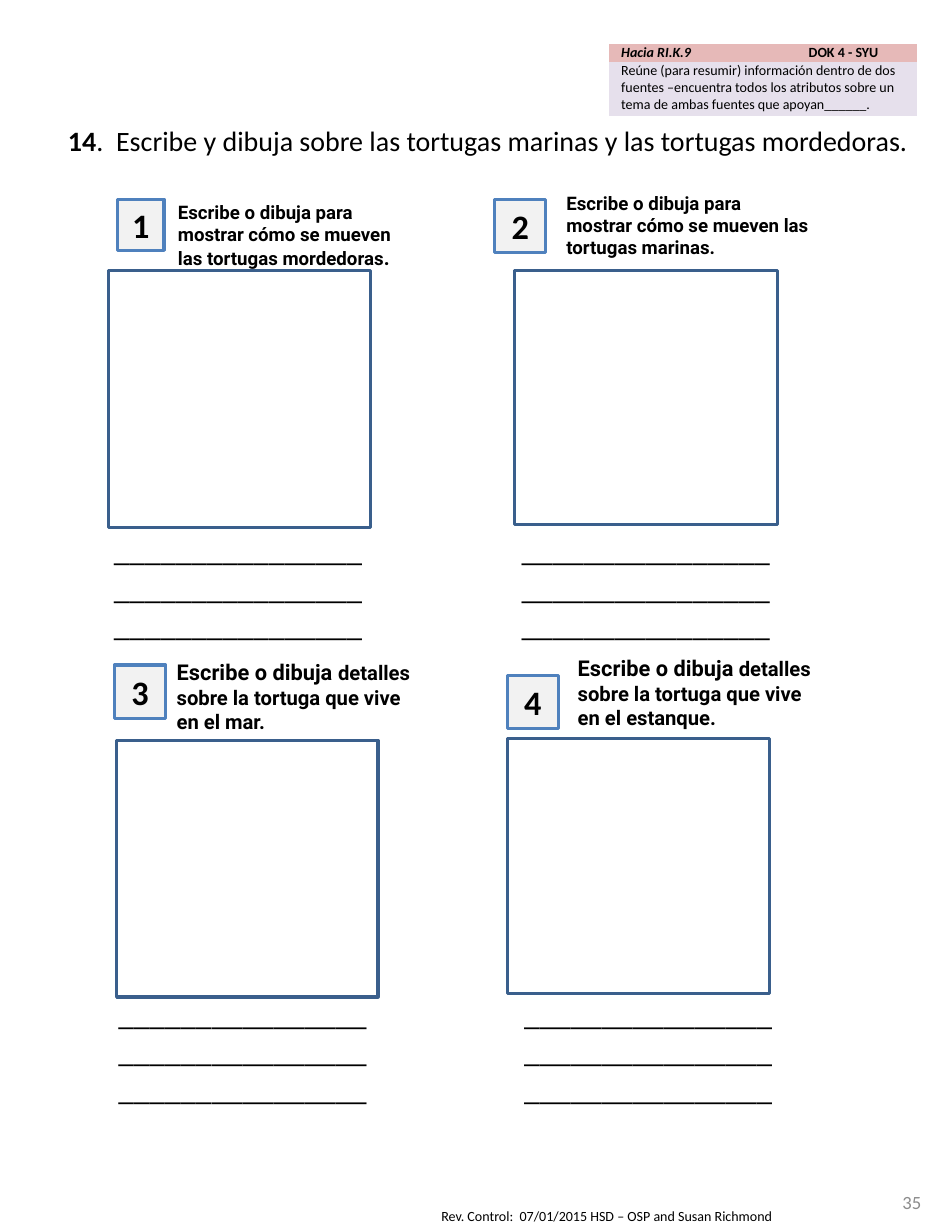
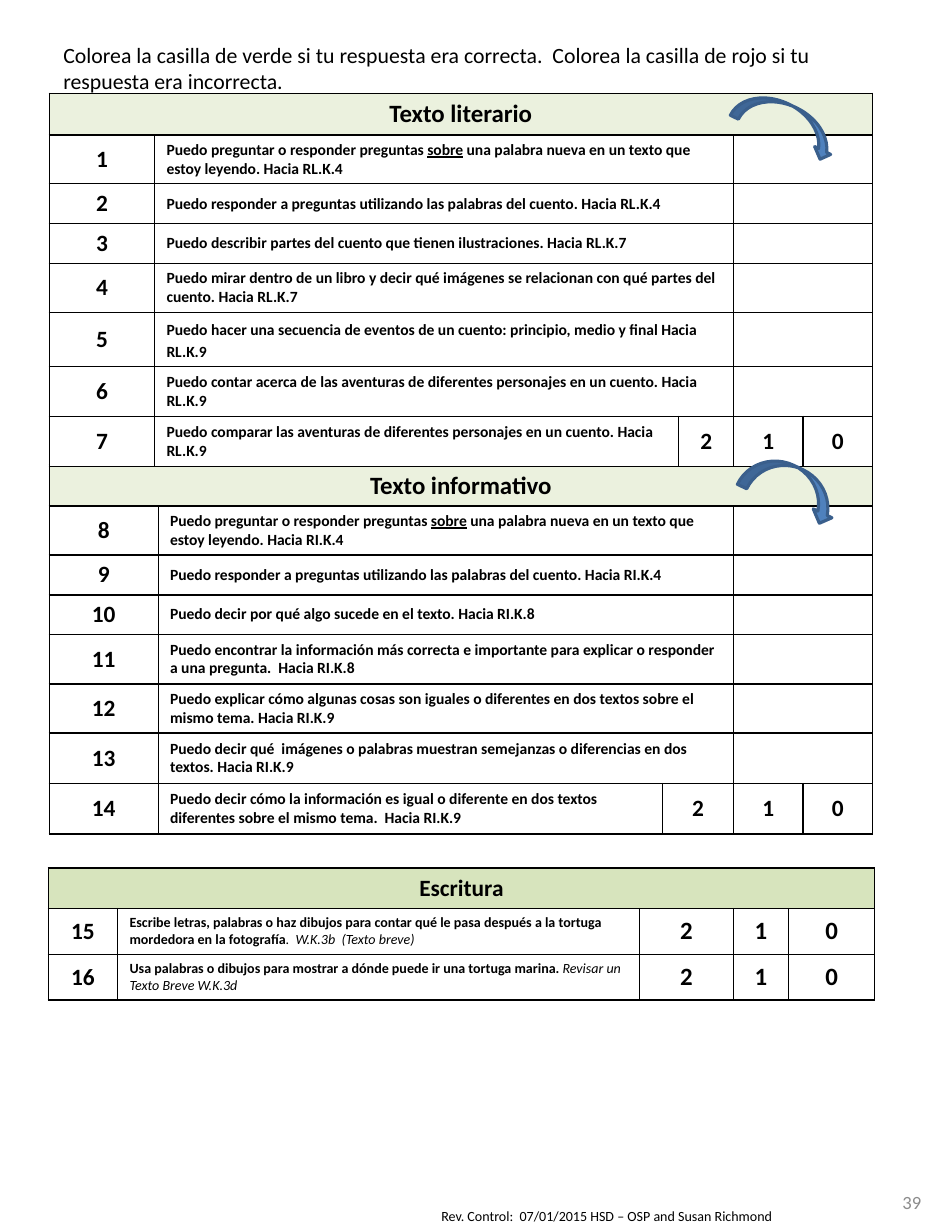
from dataclasses import dataclass

from lxml import etree
from pptx import Presentation
from pptx.dml.color import RGBColor
from pptx.enum.shapes import MSO_SHAPE
from pptx.enum.text import MSO_ANCHOR, PP_ALIGN
from pptx.oxml.ns import qn
from pptx.util import Pt

RECT = MSO_SHAPE.RECTANGLE
CURVED_ARROW = MSO_SHAPE.CURVED_DOWN_ARROW
LEFT, CENTER, RIGHT = PP_ALIGN.LEFT, PP_ALIGN.CENTER, PP_ALIGN.RIGHT
TOP, MIDDLE = MSO_ANCHOR.TOP, MSO_ANCHOR.MIDDLE
PLAIN_TABLE = "{2D5ABB26-0587-4C30-8999-92F81FD0307C}"
FOOTER = "Rev. Control:  07/01/2015 HSD – OSP and Susan Richmond"


@dataclass(frozen=True)
class Theme:
    body_font: str = "Calibri"
    prompt_font: str = "Roboto"
    black: str = "000000"
    white: str = "FFFFFF"
    gray: str = "8C8C8C"
    badge_fill: str = "F2F2F2"
    blue: str = "4F81BD"
    dark_blue: str = "3A5F8C"
    pink: str = "E6B9B8"
    lilac: str = "E6E0EC"
    pale_green: str = "EBF1DE"
    green: str = "D7E4BD"
    small: float = 9
    goal: float = 10
    page: float = 12
    intro: float = 14
    number: float = 15
    heading: float = 16
    question: float = 18
    answer: float = 20
    badge: float = 22
    inset: float = 7.7
    line: float = 2
    border: float = 1


class Deck:
    def __init__(self, theme):
        self.theme = theme
        self.prs = Presentation()
        self.prs.slide_width, self.prs.slide_height = Pt(612), Pt(792)
        self.slide = None

    def new_slide(self, page):
        """Add a blank slide with the shared footer and its page number."""
        t = self.theme
        self.slide = self.prs.slides.add_slide(self.prs.slide_layouts[6])
        self.text((276, 773, 306, 19), FOOTER, t.small, inset=t.inset)
        self.text((534, 758, 66, 30), page, t.page, color=t.gray,
                  align=RIGHT, anchor=MIDDLE, inset=t.inset)

    def set_text(self, tf, runs, size, bold=False, align=LEFT, color=None, font=None):
        """Fill the first paragraph; a run is a string or (string, font overrides)."""
        p = tf.paragraphs[0]
        p.alignment = align
        p.font.size, p.font.bold = Pt(size), bold
        p.font.name = font or self.theme.body_font
        p.font.color.rgb = RGBColor.from_string(color or self.theme.black)
        for run in [runs] if isinstance(runs, str) else runs:
            text, overrides = (run, {}) if isinstance(run, str) else run
            r = p.add_run()
            r.text = text
            for name, value in overrides.items():
                setattr(r.font, name, value)

    def text(self, box, runs, size, anchor=TOP, inset=7.2, **style):
        tf = self.slide.shapes.add_textbox(*map(Pt, box)).text_frame
        tf.word_wrap = True
        tf.vertical_anchor = anchor
        tf.margin_left = tf.margin_right = Pt(inset)
        self.set_text(tf, runs, size, **style)

    def shape(self, kind, box, fill, line, rotation=0):
        sp = self.slide.shapes.add_shape(kind, *map(Pt, box))
        sp.shadow.inherit = False
        sp.rotation = rotation
        sp.fill.solid()
        sp.fill.fore_color.rgb = RGBColor.from_string(fill)
        sp.line.color.rgb = RGBColor.from_string(line)
        sp.line.width = Pt(self.theme.line)
        return sp

    def badge(self, box, number):
        t = self.theme
        sp = self.shape(RECT, box, t.badge_fill, t.blue)
        sp.text_frame.vertical_anchor = MIDDLE
        self.set_text(sp.text_frame, number, t.badge, bold=True, align=CENTER)

    def arrow(self, box, rotation):
        self.shape(CURVED_ARROW, box, self.theme.blue, self.theme.dark_blue, rotation)

    def table(self, left, top, cols, heights):
        """Add an unstyled table whose empty cells have no margins."""
        frame = self.slide.shapes.add_table(
            len(heights), len(cols), Pt(left), Pt(top), Pt(sum(cols)), Pt(sum(heights)))
        tbl = frame.table
        tbl.first_row = tbl.horz_banding = False
        frame._element.find(".//" + qn("a:tableStyleId")).text = PLAIN_TABLE
        for col, width in zip(tbl.columns, cols):
            col.width = Pt(width)
        for row, height in zip(tbl.rows, heights):
            row.height = Pt(height)
        for cell in tbl.iter_cells():
            cell.margin_left = cell.margin_right = 0
            cell.margin_top = cell.margin_bottom = 0
        return tbl

    def fill_cell(self, cell, fill):
        cell.fill.solid()
        cell.fill.fore_color.rgb = RGBColor.from_string(fill)

    def border_cell(self, cell):
        tc_pr = cell._tc.get_or_add_tcPr()
        for side in ("a:lnL", "a:lnR", "a:lnT", "a:lnB"):
            ln = etree.SubElement(tc_pr, qn(side), w=str(Pt(self.theme.border)))
            fill = etree.SubElement(ln, qn("a:solidFill"))
            etree.SubElement(fill, qn("a:srgbClr"), val=self.theme.black)

    def cell_text(self, cell, runs, size, margin_y=3.6, anchor=MIDDLE, **style):
        cell.margin_left = cell.margin_right = Pt(self.theme.inset)
        cell.margin_top = cell.margin_bottom = Pt(margin_y)
        cell.vertical_anchor = anchor
        self.set_text(cell.text_frame, runs, size, **style)

    def standard_box(self, left, top, width, heading, description):
        """Two-row box: standard and level at a tab stop, then its description."""
        t = self.theme
        tbl = self.table(left, top, [width], [11.5, 34.7])
        head, body = tbl.cell(0, 0), tbl.cell(1, 0)
        self.cell_text(head, heading, t.small, margin_y=0, bold=True)
        p_pr = head.text_frame.paragraphs[0]._p.get_or_add_pPr()
        tabs = etree.Element(qn("a:tabLst"))
        etree.SubElement(tabs, qn("a:tab"), pos=str(Pt(120.5)), algn="l")
        p_pr.find(qn("a:defRPr")).addprevious(tabs)
        self.cell_text(body, description, t.small, margin_y=0, anchor=TOP)
        self.fill_cell(head, t.pink)
        self.fill_cell(body, t.lilac)

    def score_table(self, left, top, cols, heights, title, goals, first, scored_from,
                    title_fill, title_size, goal_size, score_size):
        """Numbered goals; from number scored_from on they carry the scores 2, 1, 0."""
        t = self.theme
        tbl = self.table(left, top, cols, heights)
        for cell in tbl.iter_cells():
            self.border_cell(cell)
            self.fill_cell(cell, t.white)
        head = tbl.cell(0, 0)
        head.merge(tbl.cell(0, 4))
        self.fill_cell(head, title_fill)
        self.cell_text(head, title, title_size, bold=True, align=CENTER)
        for row, goal in enumerate(goals, 1):
            number = first + row - 1
            self.cell_text(tbl.cell(row, 0), str(number), t.number, bold=True, align=CENTER)
            self.cell_text(tbl.cell(row, 1), goal, goal_size, bold=True)
            if number < scored_from:
                for col in (1, 3):
                    tbl.cell(row, col).merge(tbl.cell(row, col + 1))
                continue
            for col, score in enumerate("210", 2):
                self.cell_text(tbl.cell(row, col), score, score_size, bold=True, align=CENTER)
        return tbl


def drawing_slide(deck):
    t = deck.theme
    deck.new_slide("35")
    deck.standard_box(
        391.7, 28.2, 198, [("Hacia RI.K.9", {"italic": True}), "\tDOK 4 - SYU"],
        "Reúne (para resumir) información dentro de dos fuentes –encuentra todos los "
        "atributos sobre un tema de ambas fuentes que apoyan______.")
    deck.text((36, 75.6, 564, 30),
              [("14", {"bold": True}),
               ".  Escribe y dibuja sobre las tortugas marinas y las tortugas mordedoras."],
              t.question, inset=t.inset)

    larger = {"size": Pt(14)}
    # drawing frame, badge, prompt box, answer lines (left, top), prompt size, prompt
    panels = [
        ((70, 174, 168, 165), (75.5, 128, 30, 33), (107.3, 125.3, 168, 52), (66.2, 337.7), 12,
         ["Escribe o dibuja para mostrar cómo se mueven las tortugas mordedoras",
          (".", {"size": Pt(13)})]),
        ((331, 174, 169, 163.5), (318, 128, 33, 34.5), (357, 119.5, 171.4, 51), (328.3, 337.7), 12,
         "Escribe o dibuja para mostrar cómo se mueven las tortugas marinas."),
        ((75, 476, 168, 165), (73.5, 427.5, 33, 34.5), (106.5, 420, 168, 56), (69.1, 635.8), 13,
         [("Escribe o dibuja ", larger), "detalles sobre la tortuga que vive en el mar."]),
        ((326, 475, 169, 163.5), (326, 434, 33, 34.5), (364.3, 417.6, 168, 56), (329.8, 635.8), 13,
         [("Escribe o dibuja", larger), " detalles sobre la tortuga que vive en el estanque."]),
    ]
    for number, (frame, badge, prompt_box, lines, size, prompt) in enumerate(panels, 1):
        deck.shape(RECT, frame, t.white, t.dark_blue)
        deck.badge(badge, str(number))
        deck.text(prompt_box, prompt, size, bold=True, font=t.prompt_font)
        deck.text((*lines, 180, 80), "_" * 48, t.answer)


def checklist_slide(deck):
    t = deck.theme
    deck.new_slide("39")
    reading = dict(title_fill=t.pale_green, title_size=t.heading,
                   goal_size=t.goal, score_size=t.number)
    about = ("sobre", {"underline": True})
    new_word = ["Puedo preguntar o responder preguntas ", about]

    deck.score_table(
        31.7, 298.8, [70, 324, 46, 44.6, 44.6],
        [26.5, 31.5, 25.7, 25.4, 31.8, 31.5, 32.6, 32.4], "Texto informativo",
        [new_word + [" una palabra nueva en un texto que estoy leyendo. Hacia RI.K.4"],
         "Puedo responder a preguntas utilizando las palabras del cuento. Hacia RI.K.4",
         "Puedo decir por qué algo sucede en el texto. Hacia RI.K.8",
         "Puedo encontrar la información más correcta e importante para explicar o "
         "responder a una pregunta.  Hacia RI.K.8",
         "Puedo explicar cómo algunas cosas son iguales o diferentes en dos textos "
         "sobre el mismo tema. Hacia RI.K.9",
         "Puedo decir qué  imágenes o palabras muestran semejanzas o diferencias en dos "
         "textos. Hacia RI.K.9",
         "Puedo decir cómo la información es igual o diferente en dos textos diferentes "
         "sobre el mismo tema.  Hacia RI.K.9"],
        first=8, scored_from=14, **reading)

    literary = deck.score_table(
        31.7, 60, [67.7, 337, 35.3, 44.6, 44.6],
        [26.7, 31.5, 25.7, 25.4, 31.5, 34.9, 32, 32.4], "Texto literario",
        [new_word + [" una palabra nueva en un texto que estoy leyendo. Hacia RL.K.4"],
         "Puedo responder a preguntas utilizando las palabras del cuento. Hacia RL.K.4",
         "Puedo describir partes del cuento que tienen ilustraciones. Hacia RL.K.7",
         "Puedo mirar dentro de un libro y decir qué imágenes se relacionan con qué "
         "partes del cuento. Hacia RL.K.7",
         "Puedo hacer una secuencia de eventos de un cuento: principio, medio y final "
         "Hacia RL.K.9",
         "Puedo contar acerca de las aventuras de diferentes personajes en un cuento. "
         "Hacia RL.K.9",
         "Puedo comparar las aventuras de diferentes personajes en un cuento. Hacia RL.K.9"],
        first=1, scored_from=7, **reading)
    literary.cell(5, 1).text_frame.paragraphs[0].line_spacing = 1.15

    deck.text((33, 23, 523, 42),
              "Colorea la casilla de verde si tu respuesta era correcta.  Colorea la casilla "
              "de rojo si tu respuesta era incorrecta.", t.intro, inset=t.inset)
    deck.arrow((471, 67.7, 70, 23), 26.1)

    plain, note = {"bold": False}, {"bold": False, "italic": True}
    deck.score_table(
        31, 558, [44.6, 335.5, 60.5, 35.3, 55.4], [26, 29.5, 29.5], "Escritura",
        [["Escribe letras, palabras o haz dibujos para contar qué le pasa después a la "
          "tortuga mordedora en la fotografía", (".  ", plain), ("W.K.3b  (Texto breve)", note)],
         ["Usa palabras o dibujos para mostrar a dónde puede ir una tortuga marina. ",
          ("Revisar un Texto Breve W.K.3d", note)]],
        first=15, scored_from=15, title_fill=t.green, title_size=t.number,
        goal_size=t.small, score_size=t.heading)
    deck.arrow((476.6, 300, 65, 26.6), 25.4)


def main():
    deck = Deck(Theme())
    drawing_slide(deck)
    checklist_slide(deck)
    deck.prs.save("out.pptx")


if __name__ == "__main__":
    main()
